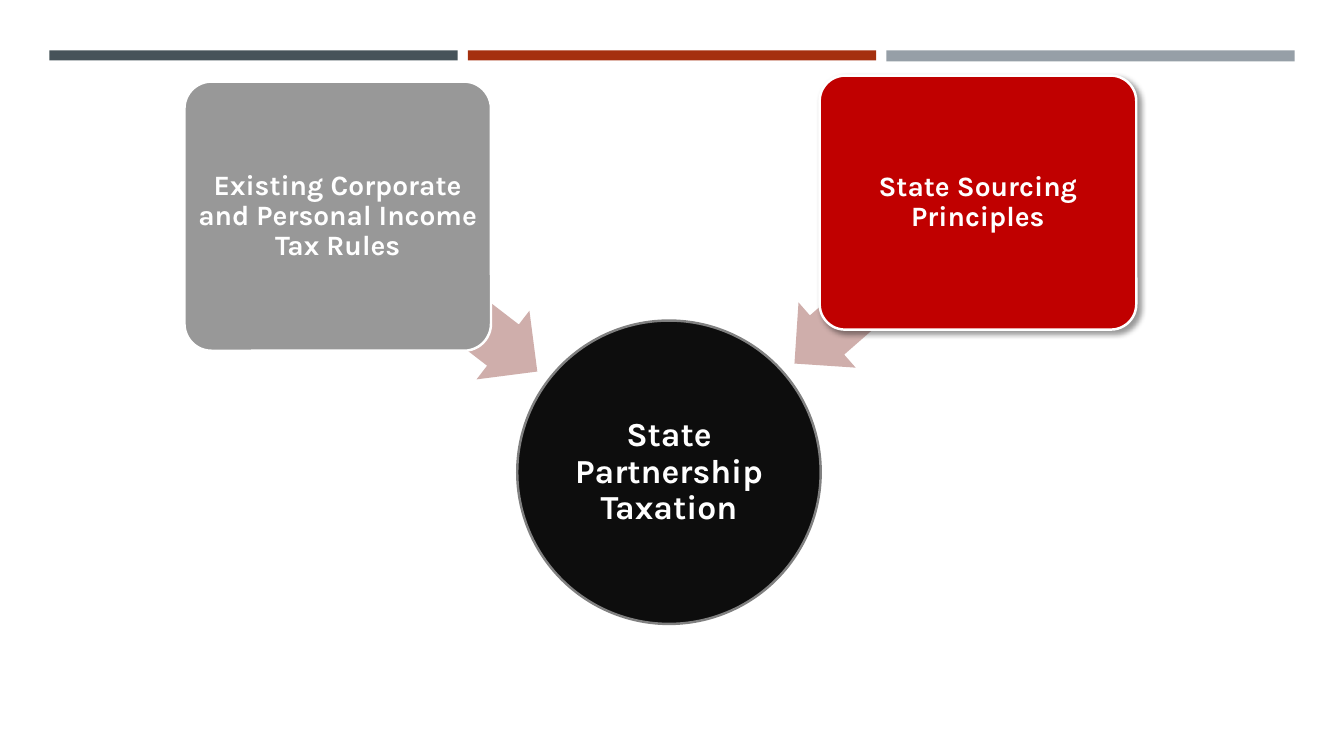
import pptx
import pptx.util
import pptx.dml.color
import pptx.enum.shapes
import pptx.enum.text
import pptx.oxml
import pptx.oxml.ns

Inches = pptx.util.Inches
Pt = pptx.util.Pt
Kind = pptx.enum.shapes.MSO_SHAPE


class Theme:
    """Colours, font and type sizes."""
    slate, rust, steel = "465359", "A5300F", "969FA7"
    black, gray, red = "0D0D0D", "989898", "C00000"
    white, rim, blush = "FFFFFF", "808080", "CFAEAB"
    font, large, small = "Karla", 24, 20
    edge = 1.75


class Deck:
    def __init__(self, theme):
        self.theme = theme
        self.file = pptx.Presentation()
        self.file.slide_width = Inches(13.33)
        self.file.slide_height = Inches(7.5)
        self.slide = self.file.slides.add_slide(self.file.slide_layouts[6])

    def color(self, code):
        return pptx.dml.color.RGBColor.from_string(code)

    def shape(self, kind, box, fill, line=None):
        item = self.slide.shapes.add_shape(kind, *map(Inches, box))
        item.shadow.inherit = False
        item.fill.solid()
        item.fill.fore_color.rgb = self.color(fill)
        if line:
            item.line.color.rgb = self.color(line)
            item.line.width = Pt(self.theme.edge)
        else:
            item.line.fill.background()
        return item

    def bar(self, left, height, fill):
        self.shape(Kind.RECTANGLE, (left, 0.5, 4.05, height), fill)

    def arrow(self, box, angle):
        item = self.shape(Kind.LEFT_ARROW, box, self.theme.blush)
        item.adjustments[0], item.adjustments[1] = 0.6, 0.5
        item.rotation = angle

    def label(self, item, words, size, inset):
        frame = item.text_frame
        frame.word_wrap = True
        frame.vertical_anchor = pptx.enum.text.MSO_ANCHOR.MIDDLE
        frame.margin_left = frame.margin_right = Inches(inset)
        frame.margin_top = frame.margin_bottom = Inches(inset)
        para = frame.paragraphs[0]
        para.alignment = pptx.enum.text.PP_ALIGN.CENTER
        para.line_spacing = 0.9
        run = para.add_run()
        run.text = words
        run.font.name = self.theme.font
        run.font.size = Pt(size)
        run.font.bold = True
        run.font.color.rgb = self.color(self.theme.white)

    def card(self, box, fill, words):
        item = self.shape(Kind.ROUNDED_RECTANGLE, box, fill, self.theme.white)
        item.adjustments[0] = 0.1
        self.label(item, words, self.theme.small, 0.04)
        return item

    def disc(self, box, words):
        item = self.shape(Kind.OVAL, box, self.theme.black, self.theme.rim)
        self.label(item, words, self.theme.large, 0.02)

    def shade(self, item):
        """Give a shape a soft shadow to the lower right."""
        effects = item._element.spPr.find(pptx.oxml.ns.qn("a:effectLst"))
        effects.append(pptx.oxml.parse_xml(
            f'<a:outerShdw {pptx.oxml.ns.nsdecls("a")} blurRad="{Pt(4)}" '
            f'dist="{Pt(3)}" dir="{45 * 60000}" algn="tl" rotWithShape="0">'
            '<a:srgbClr val="000000"><a:alpha val="40000"/></a:srgbClr>'
            '</a:outerShdw>'))


def main():
    theme = Theme()
    deck = Deck(theme)

    # Top bars
    bars = ((theme.slate, 0.1), (theme.rust, 0.1), (theme.steel, 0.11))
    for place, (fill, height) in enumerate(bars):
        deck.bar(0.49 + place * 4.15, height, fill)

    # Result in the centre
    deck.disc((5.13, 3.18, 3.01, 3.01), "State Partnership Taxation")

    # Left source
    deck.arrow((3.08, 2.49, 2.51, 0.86), 217.6)
    deck.card((1.83, 0.81, 3.04, 2.67), theme.gray,
              "Existing Corporate and Personal Income Tax Rules")

    # Right source, raised by a shadow
    deck.arrow((7.58, 2.38, 2.42, 0.86), 318.8)
    source = deck.card((8.13, 0.75, 3.14, 2.52), theme.red,
                       "State Sourcing Principles")
    deck.shade(source)

    deck.file.save("out.pptx")


if __name__ == "__main__":
    main()
